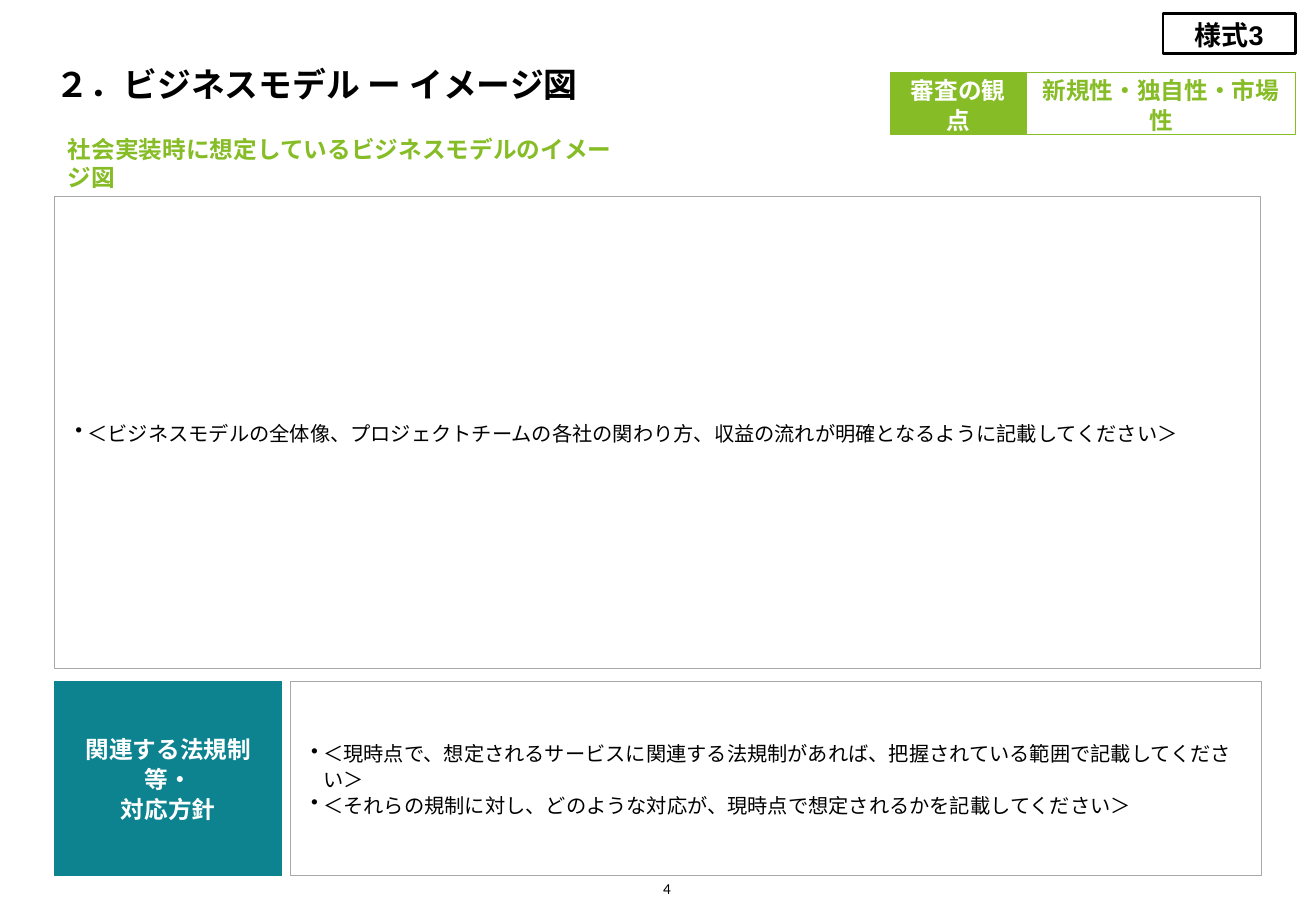
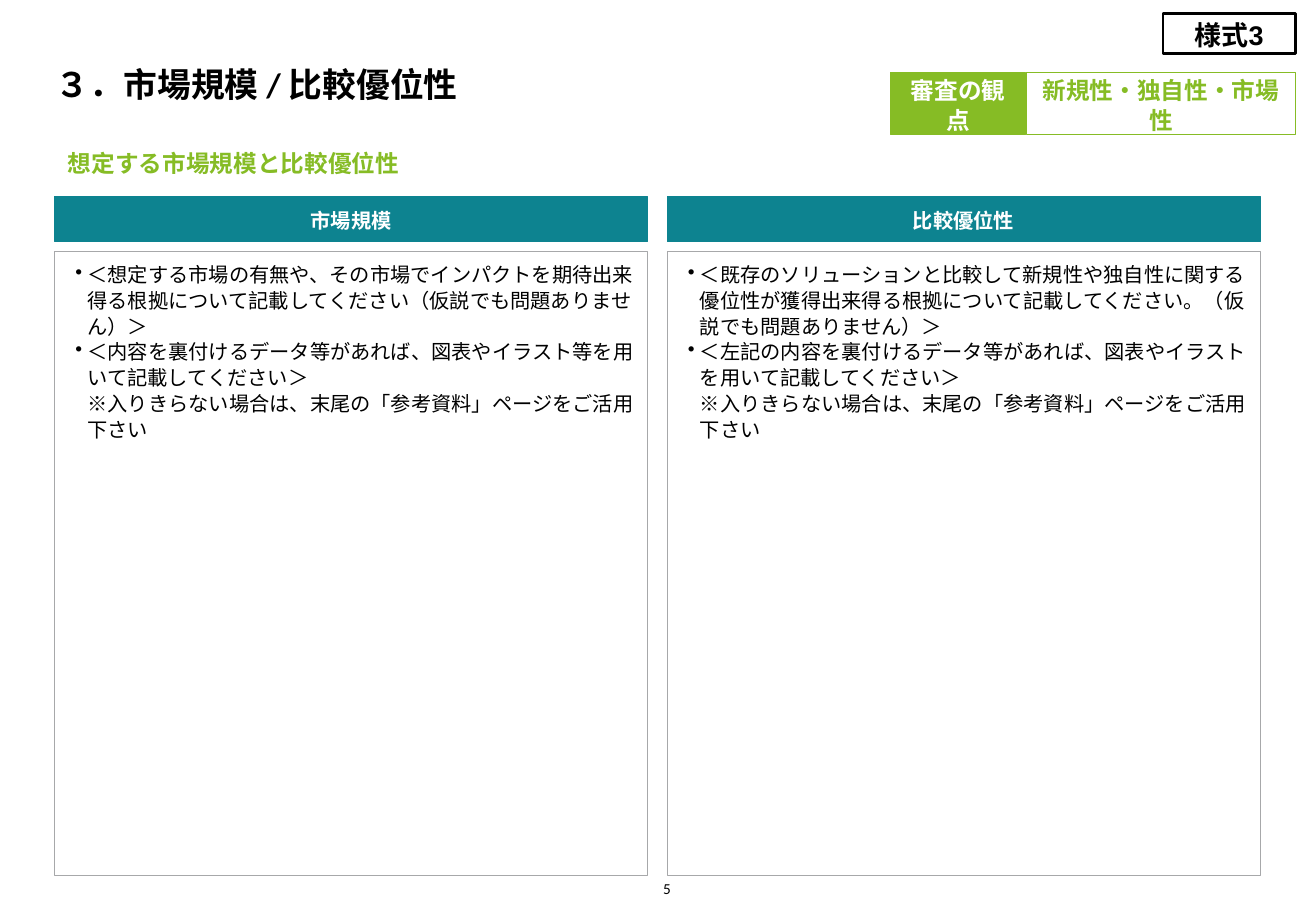
from dataclasses import dataclass

from lxml.etree import SubElement
from pptx import Presentation
from pptx.dml.color import RGBColor as RGB
from pptx.enum.shapes import MSO_SHAPE as Shape
from pptx.enum.text import MSO_ANCHOR as Anchor, PP_ALIGN as Align
from pptx.oxml.ns import qn
from pptx.util import Inches, Pt


@dataclass(frozen=True)
class Theme:
    black: RGB = RGB(0, 0, 0)
    white: RGB = RGB(255, 255, 255)
    green: RGB = RGB.from_string("86BC25")
    teal: RGB = RGB.from_string("0D8390")
    gray: RGB = RGB.from_string("A7A8AA")
    head: str = "Calibri"
    body: str = "Arial"
    title: int = 20
    form: int = 16
    label: int = 14
    text: int = 12
    page: int = 9
    thin: float = 0.5
    thick: float = 1.5
    pad: float = 0.08
    lead: float = 1.06


T = Theme()
LEFT, TOP, WIDTH, BOTTOM = 0.45, 1.62, 9.92, 7.21


def set_font(para, face, size, color, bold):
    font = para.font
    font.name, font.size, font.bold = face, Pt(size), bold
    font.color.rgb = color


def set_frame(frame, anchor, side, end):
    frame.word_wrap = True
    frame.vertical_anchor = anchor
    frame.margin_left = frame.margin_right = Inches(side)
    frame.margin_top = frame.margin_bottom = Inches(end)


def add_text(slide, area, text, size, color=T.black, bold=True,
             align=Align.LEFT, anchor=Anchor.BOTTOM, side=0, end=0):
    frame = slide.shapes.add_textbox(*map(Inches, area)).text_frame
    set_frame(frame, anchor, side, end)
    para = frame.paragraphs[0]
    para.text, para.alignment = text, align
    set_font(para, T.head, size, color, bold)


def add_box(slide, area, fill, line, width=T.thin, anchor=Anchor.MIDDLE):
    box = slide.shapes.add_shape(Shape.RECTANGLE, *map(Inches, area))
    box.shadow.inherit = False
    box.fill.solid()
    box.fill.fore_color.rgb = fill
    box.line.color.rgb = line
    box.line.width = Pt(width)
    set_frame(box.text_frame, anchor, T.pad, T.pad)
    return box.text_frame


def add_label(slide, area, text, size, fill, line, color, width=T.thin):
    para = add_box(slide, area, fill, line, width).paragraphs[0]
    para.text, para.alignment = text, Align.CENTER
    para.line_spacing = T.lead
    set_font(para, T.body, size, color, True)


def add_band(slide, area, text, size):
    add_label(slide, area, text, size, T.teal, T.teal, T.white)


def add_list(slide, area, items, anchor=Anchor.MIDDLE):
    frame = add_box(slide, area, T.white, T.gray, anchor=anchor)
    for i, item in enumerate(items):
        para = frame.add_paragraph() if i else frame.paragraphs[0]
        para.text, para.alignment = item, Align.LEFT
        para.line_spacing = T.lead
        props = para._p.get_or_add_pPr()
        props.set("marL", str(Inches(0.19)))
        props.set("indent", str(Inches(-0.1)))
        SubElement(props, qn("a:buChar"), char="•")
        set_font(para, T.body, T.text, T.black, False)


def add_page(deck, title, lead, number):
    """Add a slide with the title, labels and page number all slides share."""
    slide = deck.slides.add_slide(deck.slide_layouts[6])
    add_text(slide, (0.46, 0.15, WIDTH, 0.71), title, T.title)
    add_text(slide, (0.46, 1.11, 4.76, 0.47), lead, T.label, T.green,
             anchor=Anchor.MIDDLE, side=0.1, end=0.05)
    add_label(slide, (8.45, 0.6, 2.21, 0.51), "新規性・独自性・市場性",
              T.label, T.white, T.green, T.green)
    add_label(slide, (7.33, 0.6, 1.11, 0.51), "審査の観点",
              T.label, T.green, T.green, T.white)
    add_label(slide, (9.57, 0.11, 1.09, 0.33), "様式3",
              T.form, T.white, T.black, T.black, T.thick)
    add_text(slide, (5.32, 7.2, 0.2, 0.19), str(number), T.page,
             bold=False, align=Align.RIGHT)
    return slide


def add_model(deck):
    slide = add_page(deck, "２．ビジネスモデル ー イメージ図",
                     "社会実装時に想定しているビジネスモデルのイメージ図", 4)
    add_list(slide, (LEFT, TOP, WIDTH, 3.88), [
        "＜ビジネスモデルの全体像、プロジェクトチームの各社の関わり方、収益の流れが明確となるように記載してください＞",
    ])
    top = 5.61
    high = BOTTOM - top
    add_band(slide, (LEFT, top, 1.87, high), "関連する法規制等・\n対応方針", T.label)
    add_list(slide, (2.39, top, 7.99, high), [
        "＜現時点で、想定されるサービスに関連する法規制があれば、把握されている範囲で記載してください＞",
        "＜それらの規制に対し、どのような対応が、現時点で想定されるかを記載してください＞",
    ])


def add_market(deck):
    slide = add_page(deck, "３．市場規模 / 比較優位性", "想定する市場規模と比較優位性", 5)
    note = "\n※入りきらない場合は、末尾の「参考資料」ページをご活用下さい"
    parts = [
        ("市場規模", [
            "＜想定する市場の有無や、その市場でインパクトを期待出来得る根拠について記載してください（仮説でも問題ありません）＞",
            "＜内容を裏付けるデータ等があれば、図表やイラスト等を用いて記載してください＞" + note,
        ]),
        ("比較優位性", [
            "＜既存のソリューションと比較して新規性や独自性に関する優位性が獲得出来得る根拠について記載してください。（仮説でも問題ありません）＞",
            "＜左記の内容を裏付けるデータ等があれば、図表やイラストを用いて記載してください＞" + note,
        ]),
    ]
    gap, top = 0.16, 2.07
    wide = (WIDTH - gap) / len(parts)
    for i, (name, items) in enumerate(parts):
        left = LEFT + i * (wide + gap)
        add_band(slide, (left, TOP, wide, 0.37), name, T.text)
        add_list(slide, (left, top, wide, BOTTOM - top), items, Anchor.TOP)


def main():
    deck = Presentation()
    deck.slide_width, deck.slide_height = Inches(10.83), Inches(7.5)
    add_model(deck)
    add_market(deck)
    deck.save("out.pptx")


if __name__ == "__main__":
    main()
